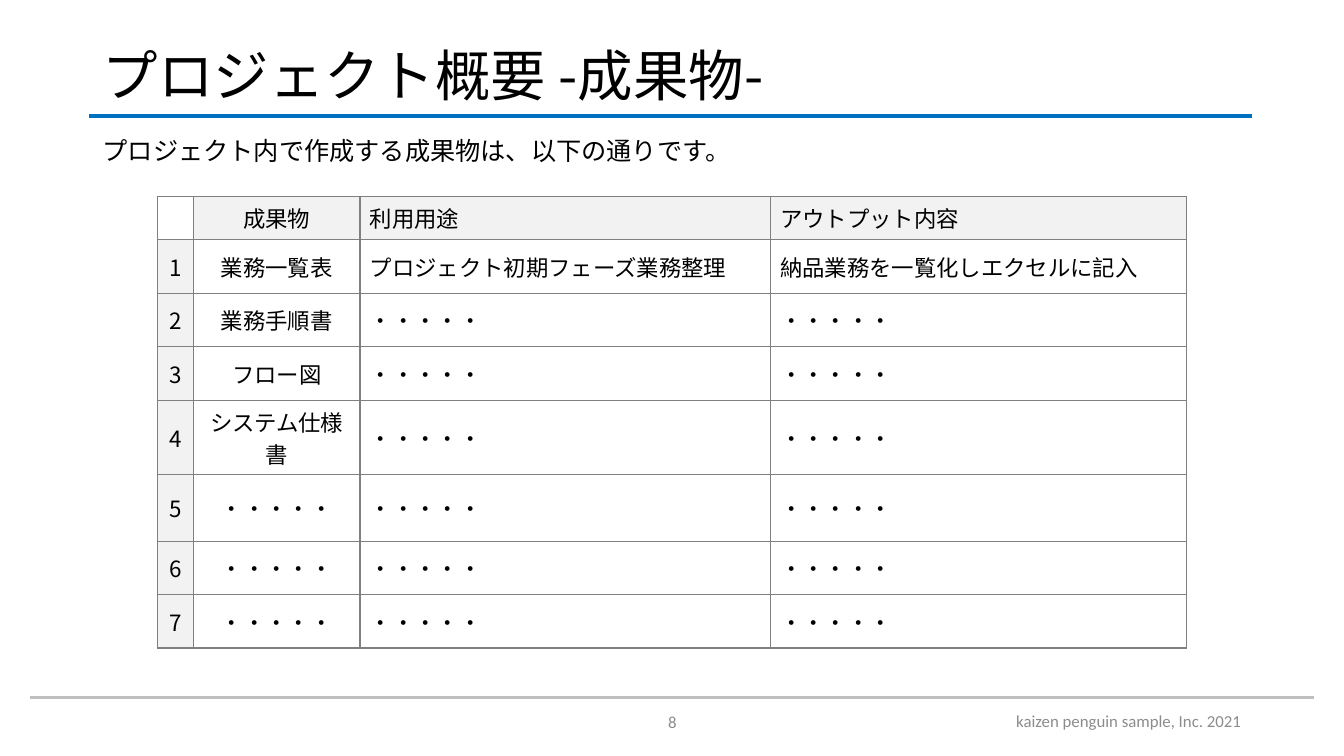
from lxml.etree import SubElement
from pptx import Presentation
from pptx.dml.color import RGBColor
from pptx.enum.shapes import MSO_CONNECTOR
from pptx.enum.text import MSO_ANCHOR, PP_ALIGN
from pptx.oxml.ns import qn
from pptx.util import Inches, Pt

BLACK = RGBColor(0x00, 0x00, 0x00)
BLUE = RGBColor(0x00, 0x70, 0xC0)
SILVER = RGBColor(0xBF, 0xBF, 0xBF)
FOOTER_GRAY = RGBColor(0x8C, 0x8C, 0x8C)
BORDER_GRAY = RGBColor(0x80, 0x80, 0x80)
HEADER_GRAY = RGBColor(0xF2, 0xF2, 0xF2)

DOTS = "・・・・・"
HEADINGS = ["", "成果物", "利用用途", "アウトプット内容"]
DELIVERABLES = [
    ["業務一覧表", "プロジェクト初期フェーズ業務整理", "納品業務を一覧化しエクセルに記入"],
    ["業務手順書", DOTS, DOTS],
    ["フロー図", DOTS, DOTS],
    ["システム仕様書", DOTS, DOTS],
] + [[DOTS] * 3] * 3
COLUMN_WIDTHS = [0.36, 1.65, 4.07, 4.13]
# Row 4 is tall enough for a name on two lines
ROW_HEIGHTS = [0.43] + [0.53] * 3 + [0.74, 0.66] + [0.53] * 2


class SlideBuilder:
    body_font = "Noto Sans CJK JP"
    footer_font = "Calibri"

    def __init__(self, slide):
        self.slide = slide

    def style(self, paragraph, size, color, font, align):
        paragraph.alignment = align
        for run in paragraph.runs:
            run.font.size = Pt(size)
            run.font.name = font
            run.font.color.rgb = color
            SubElement(run.font._element, qn("a:ea"), typeface=font)

    def rule(self, left, right, y, color, width):
        line = self.slide.shapes.add_connector(
            MSO_CONNECTOR.STRAIGHT, Inches(left), Inches(y), Inches(right), Inches(y))
        line.line.color.rgb = color
        line.line.width = Pt(width)
        SubElement(line._element.spPr, qn("a:effectLst"))

    def text(self, words, box, size, color=BLACK, font=body_font,
             align=PP_ALIGN.LEFT, anchor=MSO_ANCHOR.MIDDLE):
        frame = self.slide.shapes.add_textbox(*map(Inches, box)).text_frame
        frame.word_wrap = True
        frame.vertical_anchor = anchor
        frame.text = words
        paragraph = frame.paragraphs[0]
        self.style(paragraph, size, color, font, align)
        return paragraph

    def borders(self, cell, color, width):
        properties = cell._tc.get_or_add_tcPr()
        for side in ("lnL", "lnR", "lnT", "lnB"):
            edge = SubElement(properties, qn(f"a:{side}"), w=str(Pt(width)))
            fill = SubElement(edge, qn("a:solidFill"))
            SubElement(fill, qn("a:srgbClr"), val=str(color))

    def table(self, rows, left, top, widths, heights):
        table = self.slide.shapes.add_table(
            len(rows), len(widths), Inches(left), Inches(top),
            Inches(sum(widths)), Inches(sum(heights))).table
        table.first_row = table.horz_banding = False
        for column, width in zip(table.columns, widths):
            column.width = Inches(width)
        for r, (row, height) in enumerate(zip(rows, heights)):
            table.rows[r].height = Inches(height)
            for c, words in enumerate(row):
                cell = table.cell(r, c)
                cell.vertical_anchor = MSO_ANCHOR.MIDDLE
                self.borders(cell, BORDER_GRAY, 1)
                # Only one of the heading row and number column: the corner stays clear
                if (r == 0) != (c == 0):
                    cell.fill.solid()
                    cell.fill.fore_color.rgb = HEADER_GRAY
                else:
                    cell.fill.background()
                cell.text = words
                align = PP_ALIGN.CENTER if c < 2 else PP_ALIGN.LEFT
                self.style(cell.text_frame.paragraphs[0], 16, BLACK, self.body_font, align)


def main():
    deck = Presentation()
    deck.slide_width, deck.slide_height = Inches(13.33), Inches(7.5)
    page = SlideBuilder(deck.slides.add_slide(deck.slide_layouts[6]))

    # Rules under the title and above the footer
    page.rule(0.88, 12.42, 1.15, BLUE, 3)
    page.rule(0.3, 13.03, 6.92, SILVER, 2)

    # Title and lead sentence
    title = page.text("プロジェクト概要 -成果物-", (0.92, 0.4, 11.5, 0.75), 39.6)
    title.line_spacing = 0.9
    lead = page.text("プロジェクト内で作成する成果物は、以下の通りです。",
                     (0.92, 1.33, 11.5, 0.37), 18, anchor=MSO_ANCHOR.TOP)
    lead.line_spacing = 0.9
    lead.space_before = Pt(10)

    # Table of deliverables
    numbered = [[str(n), *row] for n, row in enumerate(DELIVERABLES, 1)]
    page.table([HEADINGS] + numbered, 1.56, 1.95, COLUMN_WIDTHS, ROW_HEIGHTS)

    # Footer
    page.text("kaizen penguin sample, Inc. 2021", (8.3, 6.95, 4.11, 0.4), 12,
              FOOTER_GRAY, page.footer_font, PP_ALIGN.RIGHT)
    page.text("8", (5.17, 6.96, 3, 0.4), 12,
              FOOTER_GRAY, page.footer_font, PP_ALIGN.CENTER)

    deck.save("out.pptx")


if __name__ == "__main__":
    main()
